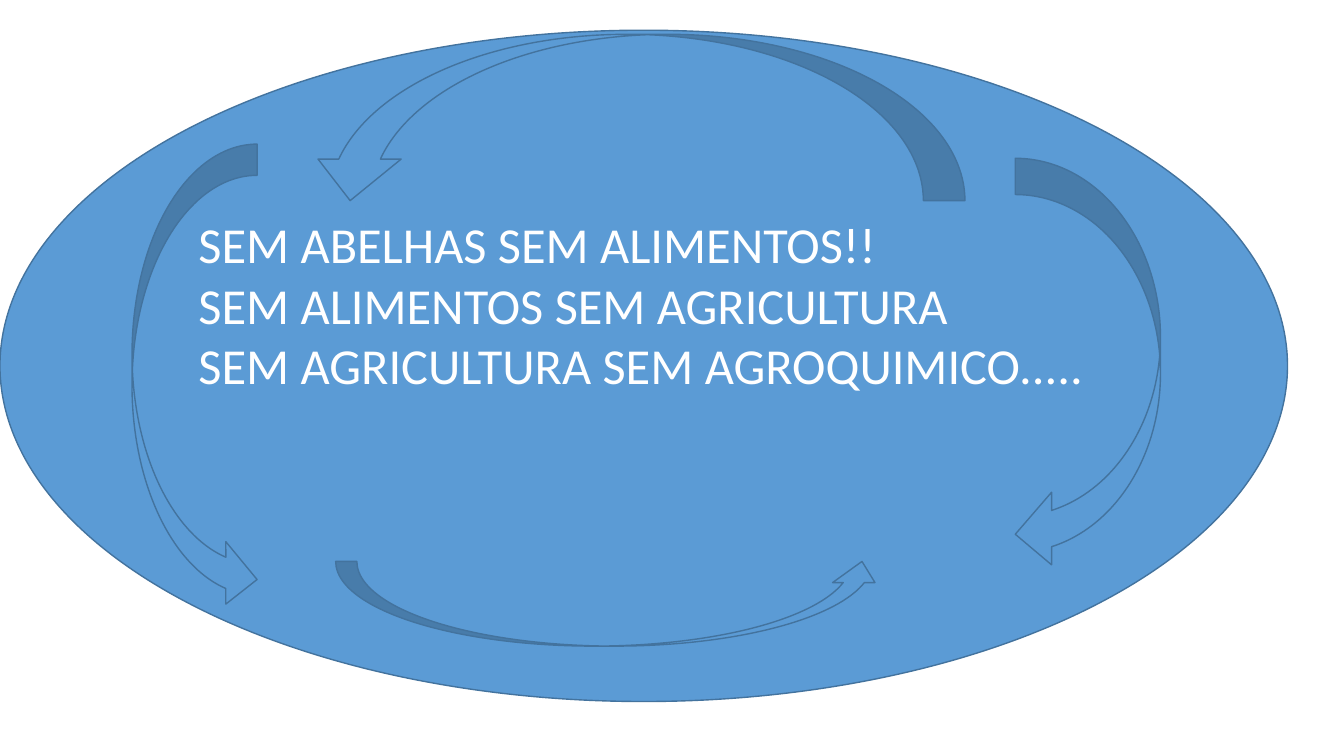
from pptx import Presentation
from pptx.dml.color import RGBColor
from pptx.enum.shapes import MSO_SHAPE
from pptx.enum.text import MSO_ANCHOR, PP_ALIGN
from pptx.util import Inches, Pt

BLUE = RGBColor(0x5B, 0x9B, 0xD5)
OUTLINE = RGBColor(0x43, 0x73, 0x9E)
WHITE = RGBColor(0xFF, 0xFF, 0xFF)

# A vertical tab is a line break inside a paragraph
SLOGANS = ("SEM ABELHAS SEM ALIMENTOS!!\vSEM ALIMENTOS SEM AGRICULTURA\n"
           "SEM AGRICULTURA SEM AGROQUIMICO.....")

# Preset, offset from the oval's corner, size, rotation
CYCLE_ARROWS = [
    (MSO_SHAPE.CURVED_LEFT_ARROW, 10.07, 1.27, 1.44, 4.09, 0),
    (MSO_SHAPE.CURVED_RIGHT_ARROW, 1.31, 1.13, 1.24, 4.63, 0),
    (MSO_SHAPE.CURVED_UP_ARROW, 3.33, 5.27, 5.43, 0.84, 0),
    (MSO_SHAPE.CURVED_UP_ARROW, 3.06, 0.04, 6.51, 1.65, 180),
]


def add_blue_shape(slide, preset, left, top, width, height):
    shape = slide.shapes.add_shape(
        preset, Inches(left), Inches(top), Inches(width), Inches(height))
    shape.shadow.inherit = False
    shape.fill.solid()
    shape.fill.fore_color.rgb = BLUE
    shape.line.color.rgb = OUTLINE
    shape.line.width = Pt(1)
    return shape


def add_slogan_oval(slide, left, top, width, height):
    oval = add_blue_shape(slide, MSO_SHAPE.OVAL, left, top, width, height)
    frame = oval.text_frame
    frame.word_wrap = True
    frame.vertical_anchor = MSO_ANCHOR.MIDDLE
    # The deep bottom margin lifts the slogans above the middle
    frame.margin_bottom = Inches(1.27)
    frame.text = SLOGANS
    for slogan in frame.paragraphs:
        slogan.alignment = PP_ALIGN.LEFT
        for run in slogan.runs:
            run.font.name = "Calibri"
            run.font.size = Pt(36)
            run.font.color.rgb = WHITE


def add_cycle_arrows(slide, left, top):
    for preset, dx, dy, width, height, rotation in CYCLE_ARROWS:
        arrow = add_blue_shape(slide, preset, left + dx, top + dy, width, height)
        arrow.rotation = rotation


def main():
    deck = Presentation()
    deck.slide_width, deck.slide_height = Inches(13.33), Inches(7.5)
    slide = deck.slides.add_slide(deck.slide_layouts[6])

    # Oval with the slogans, then the arrows circling them
    left, top = 0, 0.3
    add_slogan_oval(slide, left, top, 12.77, 6.66)
    add_cycle_arrows(slide, left, top)
    deck.save("out.pptx")


if __name__ == "__main__":
    main()
